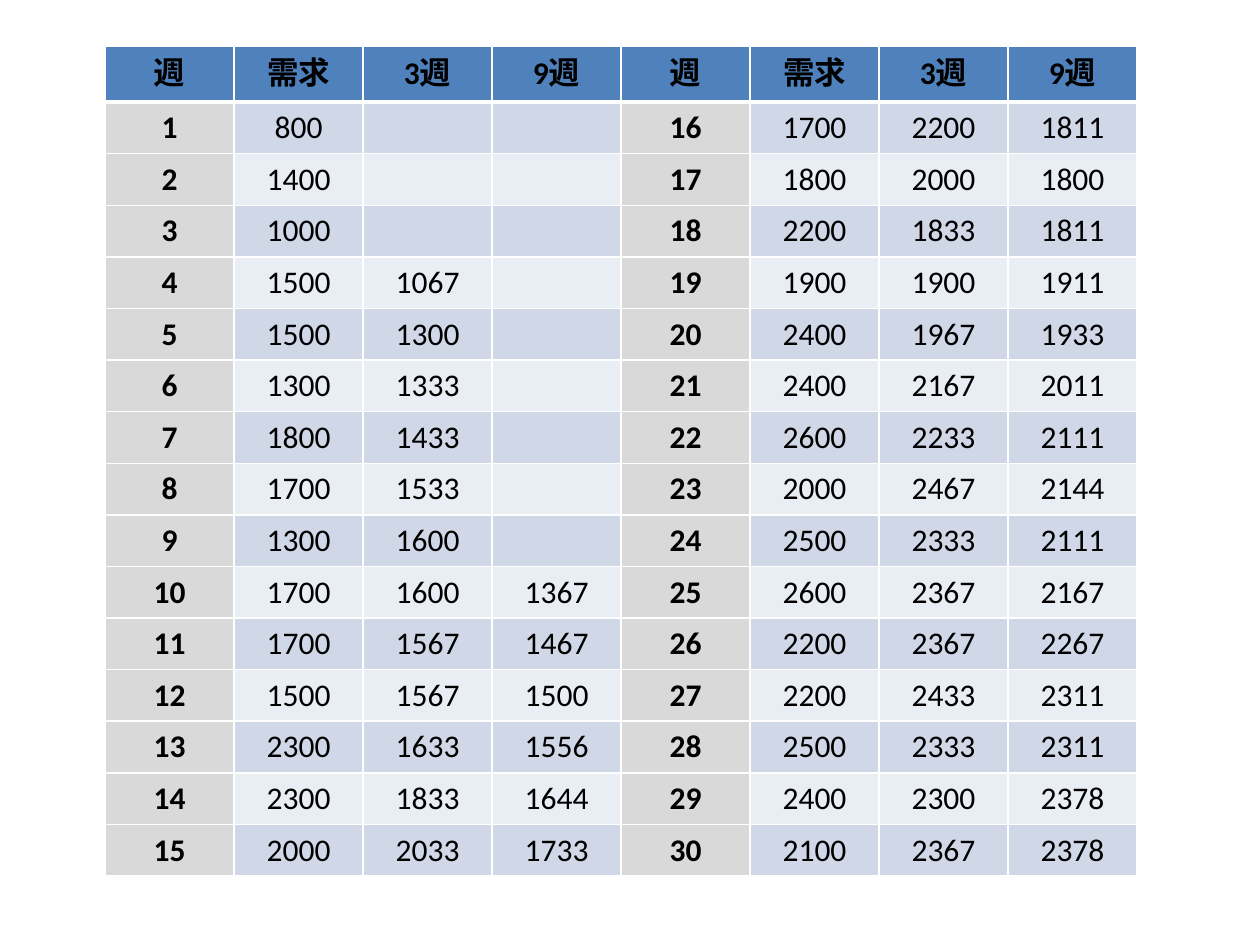
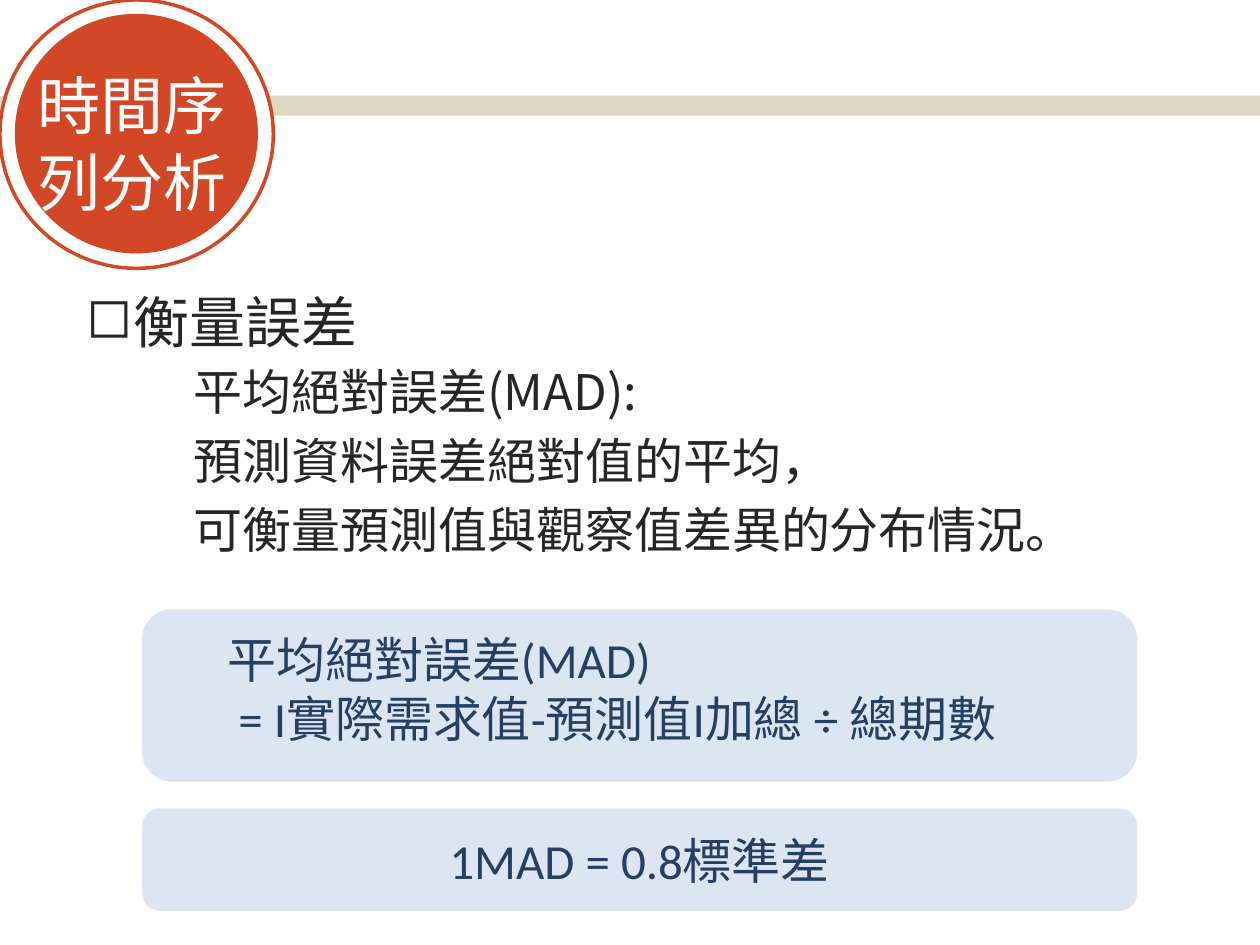
from pptx import Presentation
from pptx import util as u
from pptx.dml.color import RGBColor
from pptx.enum import shapes, text
from pptx.oxml import ns
from lxml import etree

WHITE = RGBColor(0xFF, 0xFF, 0xFF)
BLACK = RGBColor(0, 0, 0)
INK = RGBColor(0x26, 0x26, 0x26)
NAVY = RGBColor(0x25, 0x40, 0x61)
BLUE = RGBColor(0x4F, 0x81, 0xBD)
PALE = RGBColor(0xDC, 0xE6, 0xF2)
GREY = RGBColor(0xD9, 0xD9, 0xD9)
BANDS = RGBColor(0xD0, 0xD8, 0xE8), RGBColor(0xE9, 0xED, 0xF4)
RED = RGBColor(0xD2, 0x47, 0x26)
SAND = RGBColor(0xDD, 0xD9, 0xC3)
LATIN, HAN = "Calibri", "Noto Sans CJK SC"
ROUND = shapes.MSO_SHAPE.ROUNDED_RECTANGLE
OVAL = shapes.MSO_SHAPE.OVAL
MIDDLE = text.MSO_ANCHOR.MIDDLE
CENTER, LEFT = text.PP_ALIGN.CENTER, text.PP_ALIGN.LEFT

HEAD = ["週", "需求", "3週", "9週"]
NEEDS = [800, 1400, 1000, 1500, 1500, 1300, 1800, 1700, 1300, 1700,
         1700, 1500, 2300, 2300, 2000, 1700, 1800, 2200, 1900, 2400,
         2400, 2600, 2000, 2500, 2600, 2200, 2200, 2500, 2400, 2100]
HALF = 15


class Deck:
    def __init__(self):
        self.prs = Presentation()
        self.prs.slide_width, self.prs.slide_height = u.Cm(25.4), u.Cm(19.05)

    def page(self):
        self.slide = self.prs.slides.add_slide(self.prs.slide_layouts[6])

    def style(self, para, size, color, face=LATIN, bold=False, align=LEFT):
        para.alignment = align
        for run in para.runs:
            font = run.font
            font.size, font.bold, font.name = u.Pt(size), bold, face
            font.color.rgb = color
            latin = font._element.find(ns.qn("a:latin"))
            latin.addnext(etree.Element(ns.qn("a:ea"), typeface=face))

    def shape(self, kind, box, fill, line=None):
        form = self.slide.shapes.add_shape(kind, *map(u.Cm, box))
        form.shadow.inherit = False
        form.fill.solid()
        form.fill.fore_color.rgb = fill
        if line is None:
            form.line.fill.background()
        else:
            form.line.color.rgb, form.line.width = line, u.Pt(2)
        return form

    def panel(self, box, words, align, indent=0, base=0.13):
        frame = self.shape(ROUND, box, PALE, PALE).text_frame
        frame.word_wrap, frame.vertical_anchor = True, MIDDLE
        frame.margin_bottom = u.Cm(base)
        frame.text = words
        for para in frame.paragraphs:
            para._p.get_or_add_pPr().set("marL", str(u.Cm(indent)))
            self.style(para, 28, NAVY, align=align)

    def label(self, box, words, size, color, pitch, wrap=True):
        frame = self.slide.shapes.add_textbox(*map(u.Cm, box)).text_frame
        frame.word_wrap = wrap
        frame.text = words
        for para in frame.paragraphs:
            para.line_spacing = u.Pt(pitch)
            self.style(para, size, color, HAN)
        return frame.paragraphs

    def indent(self, para, left, first=0, mark=None):
        props = para._p.get_or_add_pPr()
        props.set("marL", str(u.Cm(left)))
        props.set("indent", str(u.Cm(first)))
        if mark:
            etree.SubElement(props, ns.qn("a:buChar"), char=mark)

    def badge(self, words):
        self.shape(ROUND, (0, 1.93, 26, 0.4), SAND)
        self.shape(OVAL, (0, 0, 5.51, 5.41), WHITE, RED)
        self.shape(OVAL, (0.3, 0.28, 4.9, 4.83), RED)
        self.label((0.51, 1.19, 4.37, 3.33), words, 36, WHITE, 44, False)

    def edge(self, cell, base):
        props = cell._tc.get_or_add_tcPr()
        for spot, (side, width) in enumerate(
                [("lnL", 1), ("lnR", 1), ("lnT", 1), ("lnB", base)]):
            line = etree.Element(ns.qn("a:" + side), w=str(u.Pt(width)))
            fill = etree.SubElement(line, ns.qn("a:solidFill"))
            etree.SubElement(fill, ns.qn("a:srgbClr"), val=str(WHITE))
            props.insert(spot, line)

    def table(self, rows, left, top, wide, high, first):
        count = len(rows[0])
        grid = self.slide.shapes.add_table(
            len(rows), count, u.Cm(left), u.Cm(top), u.Cm(wide * count),
            u.Cm(first + high * (len(rows) - 1))).table
        for r, row in enumerate(rows):
            grid.rows[r].height = u.Cm(high if r else first)
            for c, value in enumerate(row):
                cell = grid.cell(r, c)
                week = c % len(HEAD) == 0
                cell.text = str(value)
                cell.vertical_anchor = MIDDLE
                cell.fill.solid()
                cell.fill.fore_color.rgb = (
                    BLUE if r == 0 else GREY if week else BANDS[(r - 1) % 2])
                self.style(cell.text_frame.paragraphs[0], 18, BLACK,
                           bold=r == 0 or week, align=CENTER)
                self.edge(cell, 1 if r else 3)


def mean(week, span):
    if week <= span:
        return ""
    return round(sum(NEEDS[week - 1 - span:week - 1]) / span)


def record(week):
    return [week, NEEDS[week - 1], mean(week, 3), mean(week, 9)]


def main():
    deck = Deck()
    deck.page()
    rows = [record(w) + record(w + HALF) for w in range(1, HALF + 1)]
    deck.table([HEAD * 2] + rows, 2.12, 0.93, 2.6, 1.04, 1.13)

    deck.page()
    lead, = deck.label((1.5, 5.69, 22.86, 1.6), "衡量誤差", 32, INK, 38)
    deck.indent(lead, 0.95, -0.95, "◻")
    notes = deck.label(
        (1.5, 7.16, 22.86, 4.5),
        "平均絕對誤差(MAD):\n預測資料誤差絕對值的平均，\n"
        "可衡量預測值與觀察值差異的分布情況。", 28, INK, 34)
    for para in notes:
        deck.indent(para, 2.16)
    for para in notes[1:]:
        para.space_before = u.Pt(5.4)
    deck.panel((2.9, 12.32, 19.99, 3.4),
               "平均絕對誤差(MAD)\n = I實際需求值-預測值I加總 ÷ 總期數",
               LEFT, 1.27, 0.4)
    deck.panel((2.9, 16.33, 19.99, 2), "1MAD = 0.8標準差", CENTER)
    deck.badge("時間序\n列分析")
    deck.prs.save("out.pptx")


if __name__ == "__main__":
    main()
